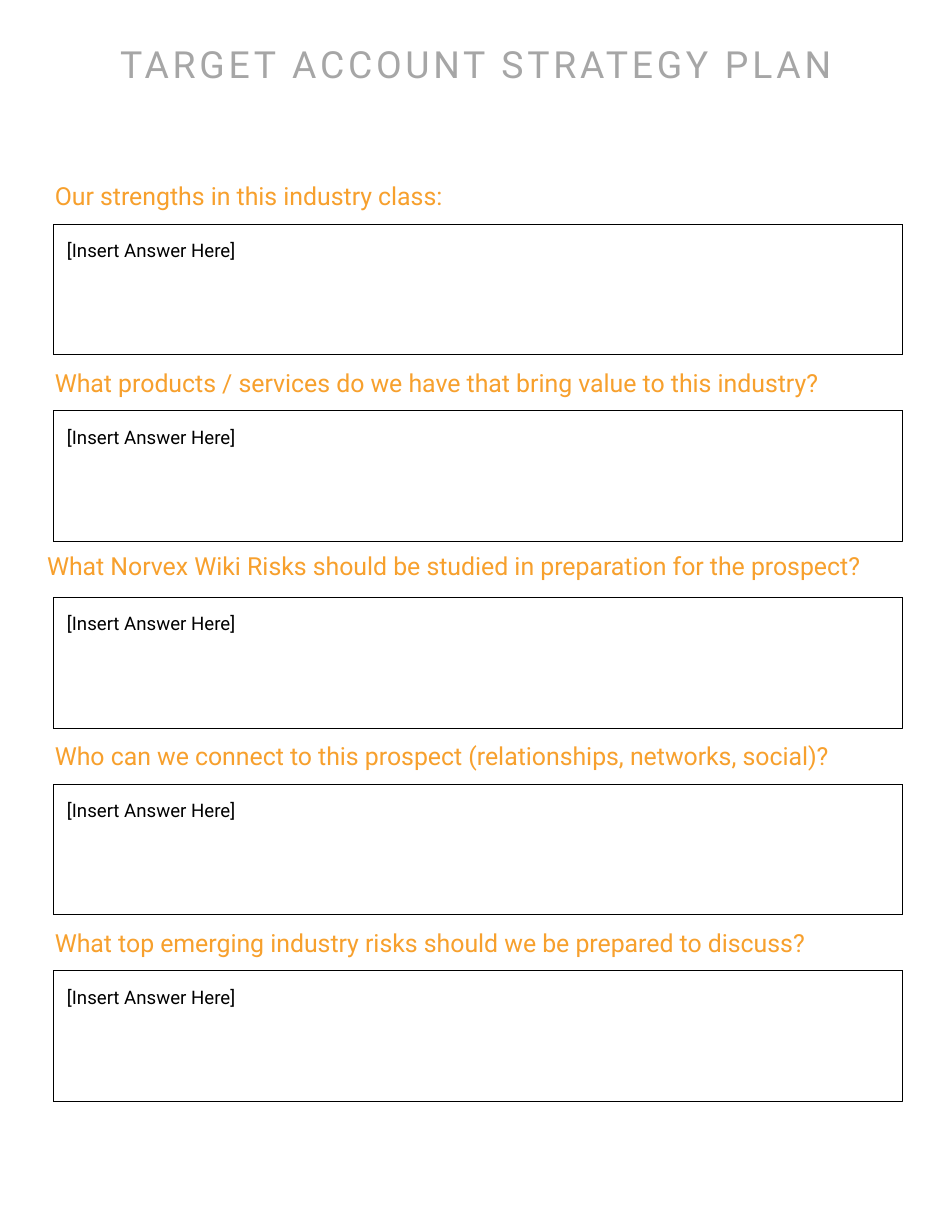
from dataclasses import dataclass

from pptx import Presentation
from pptx import util as u
from pptx.dml.color import RGBColor
from pptx.enum import dml, shapes, text

SLIDE_WIDTH, SLIDE_HEIGHT = u.Inches(8.5), u.Inches(11)
ROW = SLIDE_HEIGHT / 66
COLUMN = SLIDE_WIDTH / 102
FIRST_ROW, ROWS_PER_QUESTION = 9.5, 10
FONT = "Roboto"
ORANGE, GREY, BLACK = "F7A02D", "A6A6A6", "000000"


@dataclass
class Box:
    column: float
    row: float
    columns: float
    rows: float

    def emu(self) -> tuple[int, ...]:
        return (round(self.column * COLUMN), round(self.row * ROW),
                round(self.columns * COLUMN), round(self.rows * ROW))


@dataclass
class Question:
    wording: str
    column: float = 5.04
    columns: float = 95
    row_shift: float = 0


QUESTIONS = [
    Question("Our strengths in this industry class:"),
    Question("What products / services do we have that bring value to this industry?"),
    Question("What Norvex Wiki Risks should be studied in preparation for the prospect?",
             4.2, 97.8, -0.16),
    Question("Who can we connect to this prospect (relationships, networks, social)?"),
    Question("What top emerging industry risks should we be prepared to discuss?"),
]


def color(hex_value: str) -> RGBColor:
    return RGBColor.from_string(hex_value)


def write(shape, wording: str, size: float, hex_value: str,
          margins: tuple[float, float] = (0.07, 0.03)) -> None:
    frame = shape.text_frame
    frame.text = wording
    frame.word_wrap = True
    frame.auto_size = text.MSO_AUTO_SIZE.NONE
    frame.vertical_anchor = text.MSO_ANCHOR.TOP
    frame.margin_left = frame.margin_right = u.Inches(margins[0])
    frame.margin_top = frame.margin_bottom = u.Inches(margins[1])
    font = frame.paragraphs[0].runs[0].font
    font.name, font.size = FONT, u.Pt(size)
    font.color.rgb = color(hex_value)


def add_title(slide, wording: str) -> None:
    title = slide.shapes.title
    title.left, title.top, title.width, title.height = Box(5.28, 2, 91.44, 2.82).emu()
    write(title, wording, 24, GREY)
    paragraph = title.text_frame.paragraphs[0]
    paragraph.alignment = text.PP_ALIGN.CENTER
    paragraph.runs[0].font._element.set("spc", "240")


def add_question(slide, question: Question, row: float) -> None:
    heading = slide.shapes.add_textbox(
        *Box(question.column, row + question.row_shift, question.columns, 2.04).emu())
    write(heading, question.wording, 16, ORANGE)

    group = slide.shapes.add_group_shape()
    answer = group.shapes.add_textbox(*Box(6, row + 3, 88.44, 1.8).emu())
    write(answer, "[Insert Answer Here]", 12, BLACK, (0.1, 0.05))
    border = group.shapes.add_shape(
        shapes.MSO_SHAPE.RECTANGLE, *Box(5.68, row + 2.5, 91, 7).emu())
    border.shadow.inherit = False
    border.fill.background()
    border.line.color.rgb = color(BLACK)
    border.line.width = u.Pt(0.25)
    border.line.dash_style = dml.MSO_LINE.ROUND_DOT


def main() -> None:
    presentation = Presentation()
    presentation.slide_width, presentation.slide_height = SLIDE_WIDTH, SLIDE_HEIGHT
    slide = presentation.slides.add_slide(presentation.slide_layouts[5])
    add_title(slide, "TARGET ACCOUNT STRATEGY PLAN")
    for index, question in enumerate(QUESTIONS):
        add_question(slide, question, FIRST_ROW + index * ROWS_PER_QUESTION)
    presentation.save("out.pptx")


if __name__ == "__main__":
    main()
